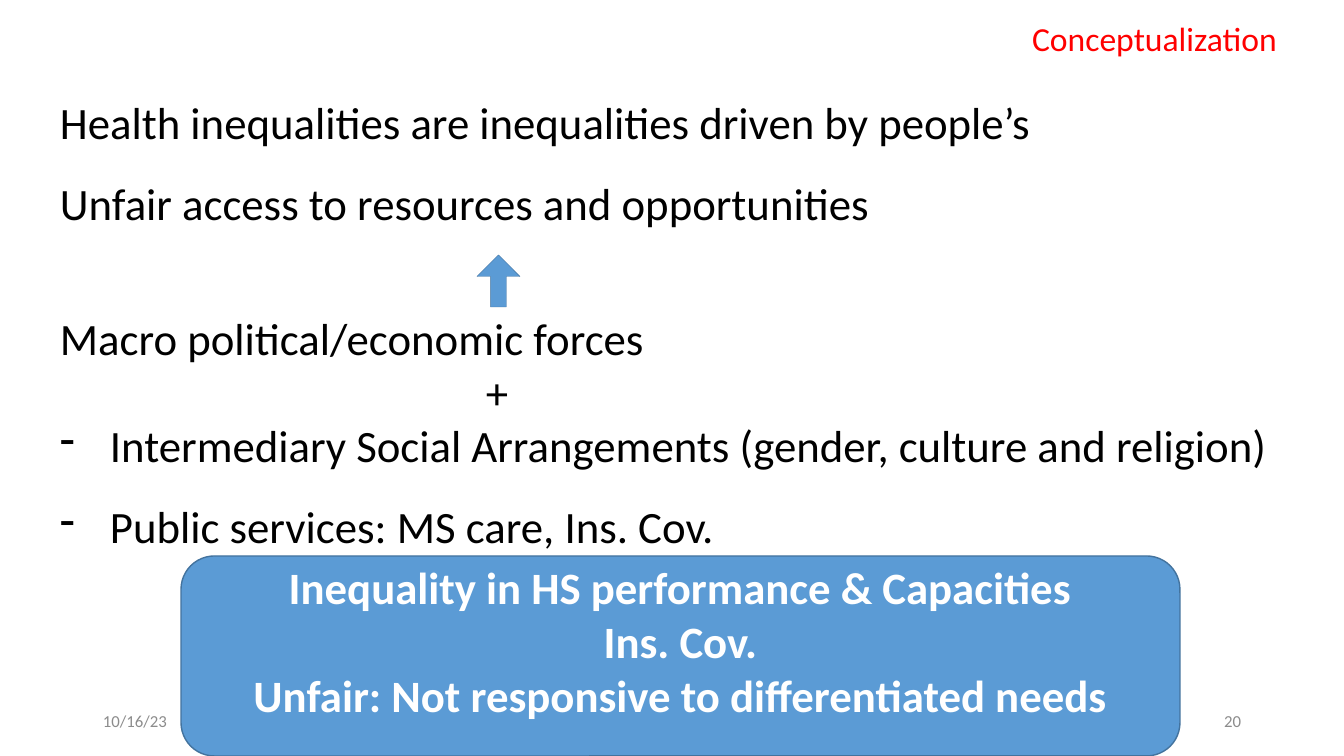
"""Build the slide on the conceptualization of health inequalities."""
import pptx
import pptx.dml.color
import pptx.enum.shapes
import pptx.enum.text
import pptx.util
from lxml import etree

BLACK = pptx.dml.color.RGBColor(0x00, 0x00, 0x00)
WHITE = pptx.dml.color.RGBColor(0xFF, 0xFF, 0xFF)
RED = pptx.dml.color.RGBColor(0xFF, 0x00, 0x00)
GRAY = pptx.dml.color.RGBColor(0x8C, 0x8C, 0x8C)
BLUE = pptx.dml.color.RGBColor(0x5B, 0x9B, 0xD5)
DARK_BLUE = pptx.dml.color.RGBColor(0x43, 0x73, 0x9E)
ALIGN = pptx.enum.text.PP_ALIGN
ANCHOR = pptx.enum.text.MSO_ANCHOR
SHAPE = pptx.enum.shapes.MSO_SHAPE
PX = 914400 / 100.8


def px(*lengths):
    """Turn pixel lengths into EMU."""
    return [pptx.util.Emu(round(n * PX)) for n in lengths]


def add_run(p, text, size, color, bold=False):
    """Add one formatted run to a paragraph."""
    r = p.add_run()
    r.text = text
    r.font.name = "Calibri"
    r.font.size = pptx.util.Pt(size)
    r.font.bold = bold
    r.font.color.rgb = color


prs = pptx.Presentation()
prs.slide_width, prs.slide_height = px(1344, 756)
s = prs.slides.add_slide(prs.slide_layouts[5])

title = s.shapes.title
title.left, title.top, title.width, title.height = px(1022, 13, 320, 50)
tf = title.text_frame
tf.auto_size = pptx.enum.text.MSO_AUTO_SIZE.NONE
tf.vertical_anchor = ANCHOR.TOP
tf.paragraphs[0].alignment = ALIGN.LEFT
add_run(tf.paragraphs[0], "Conceptualization", 24, RED)

body = [
    ("Health inequalities are inequalities driven by people’s", 1.5, 0, 0, False),
    ("Unfair access to resources and opportunities", 1.5, 0, 0, False),
    ("Macro political/economic forces", 1, 58, 0, False),
    ("+", 1, 0, 426, False),
    ("Intermediary Social Arrangements (gender, culture and religion)", 1, 0, 50, True),
    ("Public services: MS care, Ins. Cov.", 1.5, 0, 50, True),
]
tf = s.shapes.add_textbox(*px(50, 63, 1269, 500)).text_frame
tf.word_wrap = True
for i, (text, spacing, before, indent, dash) in enumerate(body):
    p = tf.add_paragraph() if i else tf.paragraphs[0]
    p.line_spacing = float(spacing)
    p.space_before = pptx.util.Pt(before)
    add_run(p, text, 32, BLACK)
    pPr = p._p.get_or_add_pPr()
    pPr.set("marL", str(px(indent)[0]))
    if dash:
        pPr.set("indent", str(px(-indent)[0]))
        etree.SubElement(pPr, pptx.oxml.ns.qn("a:buChar")).set("char", "-")

panel = s.shapes.add_shape(SHAPE.ROUNDED_RECTANGLE, *px(181, 556, 999, 200))
arrow = s.shapes.add_shape(SHAPE.UP_ARROW, *px(477, 255, 43, 52))
arrow.adjustments[0] = 0.365
for sp, weight in ((panel, 1), (arrow, 0.25)):
    sp.shadow.inherit = False
    sp.fill.solid()
    sp.fill.fore_color.rgb = BLUE
    sp.line.color.rgb = DARK_BLUE
    sp.line.width = pptx.util.Pt(weight)

tf = panel.text_frame
tf.word_wrap = True
tf.vertical_anchor = ANCHOR.MIDDLE
tf.margin_bottom = px(36)[0]
findings = ["Inequality in HS performance & Capacities", "Ins. Cov.",
            "Unfair: Not responsive to differentiated needs"]
for i, text in enumerate(findings):
    p = tf.add_paragraph() if i else tf.paragraphs[0]
    p.alignment = ALIGN.CENTER
    add_run(p, text, 32, WHITE, True)

for text, left, align in (("10/16/23", 93, ALIGN.LEFT), ("20", 949, ALIGN.RIGHT)):
    tf = s.shapes.add_textbox(*px(left, 701, 302, 40)).text_frame
    tf.word_wrap = True
    tf.vertical_anchor = ANCHOR.MIDDLE
    tf.paragraphs[0].alignment = align
    add_run(tf.paragraphs[0], text, 12, GRAY)

prs.save("out.pptx")
